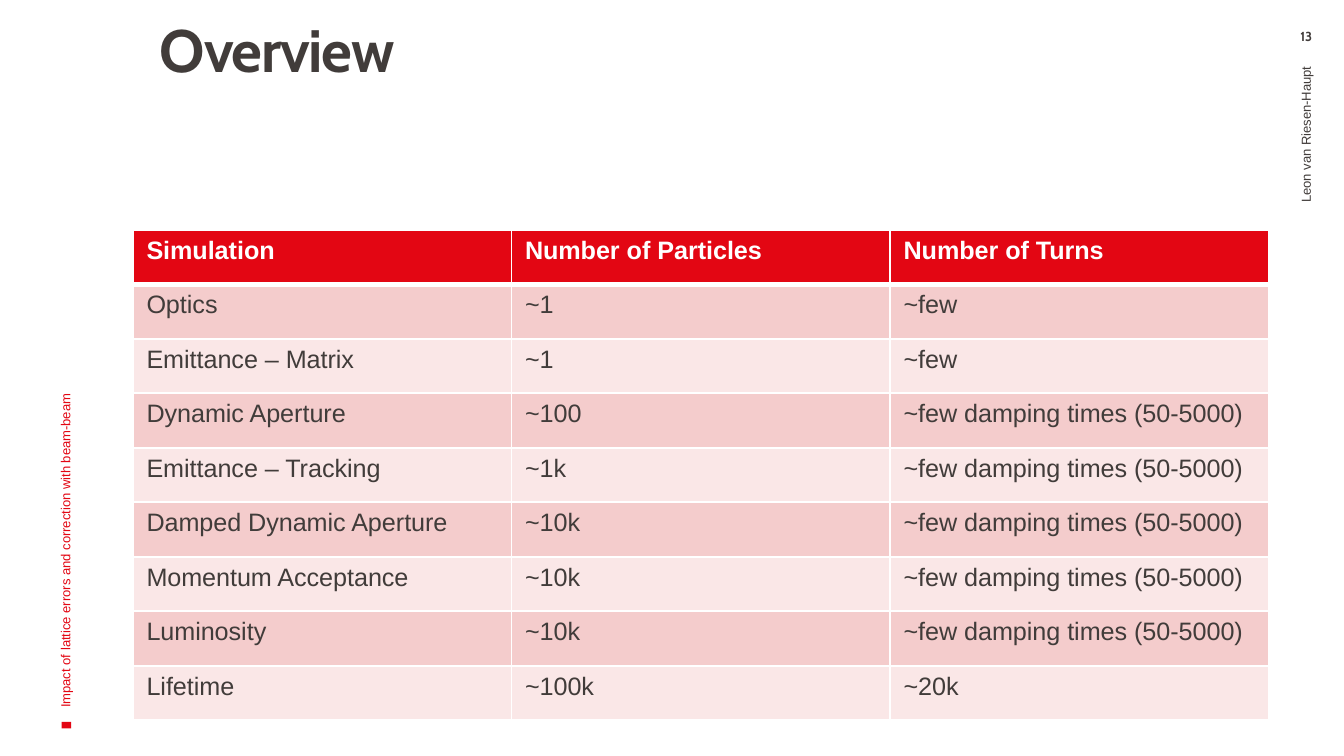
from lxml.etree import SubElement
from pptx import Presentation
from pptx.dml.color import RGBColor
from pptx.enum.shapes import MSO_SHAPE
from pptx.enum.text import MSO_ANCHOR, MSO_AUTO_SIZE, PP_ALIGN
from pptx.oxml.ns import qn
from pptx.util import Inches, Pt

RED, DARK, WHITE = "E30613", "413C3A", "FFFFFF"
BANDS = ["F4CCCC", "FAE7E7"]
DAMPING = "~few damping times (50-5000)"
ROWS = [
    ("Simulation", "Number of Particles", "Number of Turns"),
    ("Optics", "~1", "~few"),
    ("Emittance – Matrix", "~1", "~few"),
    ("Dynamic Aperture", "~100", DAMPING),
    ("Emittance – Tracking", "~1k", DAMPING),
    ("Damped Dynamic Aperture", "~10k", DAMPING),
    ("Momentum Acceptance", "~10k", DAMPING),
    ("Luminosity", "~10k", DAMPING),
    ("Lifetime", "~100k", "~20k"),
]


def paint(target, color):
    target.solid()
    target.fore_color.rgb = RGBColor.from_string(color)


def write(frame, text, size, color=DARK, font="Arial", bold=False,
          align=PP_ALIGN.LEFT, spacing=None, tracking=None):
    para = frame.paragraphs[0]
    para.alignment = align
    para.line_spacing = spacing
    span = para.add_run()
    span.text = text
    span.font.size = Pt(size)
    span.font.name = font
    span.font.bold = bold
    paint(span.font.fill, color)
    if tracking is not None:
        span.font._element.set("spc", str(int(tracking * 100)))


def set_frame(frame, insets, anchor):
    frame.word_wrap = True
    frame.auto_size = MSO_AUTO_SIZE.NONE
    frame.vertical_anchor = anchor
    (frame.margin_left, frame.margin_top,
     frame.margin_right, frame.margin_bottom) = map(Inches, insets)


def add_title(page, box):
    title = page.shapes.title
    title.left, title.top, title.width, title.height = map(Inches, box)
    set_frame(title.text_frame, (0.2, 0, 0.08, 0.05), MSO_ANCHOR.TOP)
    write(title.text_frame, "Overview", 32, font="Cabin", bold=True,
          spacing=0.8, tracking=-0.7)


def add_label(page, box, text, rotation=0, insets=(0.1, 0.05, 0.1, 0.05),
              anchor=MSO_ANCHOR.MIDDLE, **style):
    label = page.shapes.add_textbox(*map(Inches, box))
    label.rotation = rotation
    set_frame(label.text_frame, insets, anchor)
    write(label.text_frame, text, 7, **style)


def add_marker(page, box):
    marker = page.shapes.add_shape(MSO_SHAPE.RECTANGLE, *map(Inches, box))
    marker.rotation = 270
    marker.shadow.inherit = False
    paint(marker.fill, RED)
    marker.line.fill.background()


def set_borders(cell, top, bottom):
    properties = cell._tc.get_or_add_tcPr()
    for side, width in (("L", 1), ("R", 1), ("T", top), ("B", bottom)):
        line = SubElement(properties, qn(f"a:ln{side}"), w=str(Pt(width)))
        fill = SubElement(line, qn("a:solidFill"))
        SubElement(fill, qn("a:srgbClr"), val=WHITE)


def add_simulation_table(page, box):
    left, top, width, height = map(Inches, box)
    columns = len(ROWS[0])
    table = page.shapes.add_table(len(ROWS), columns, left, top, width, height).table
    for column in table.columns:
        column.width = width // columns
    for index, texts in enumerate(ROWS):
        table.rows[index].height = height // len(ROWS)
        header = index == 0
        for number, text in enumerate(texts):
            cell = table.cell(index, number)
            set_borders(cell, 3 if index == 1 else 1, 3 if header else 1)
            paint(cell.fill, RED if header else BANDS[(index - 1) % 2])
            write(cell.text_frame, text, 13.5, WHITE if header else DARK, bold=header)


def build_overview(deck):
    page = deck.slides.add_slide(deck.slide_layouts[5])
    add_marker(page, (0.47, 5.36, 0.05, 0.07))
    add_simulation_table(page, (0.99, 1.71, 8.45, 3.65))
    add_title(page, (0.99, 0.2, 4.01, 1.17))
    add_label(page, (-1.34, 3.04, 3.65, 1),
              "Impact of lattice errors and correction with beam-beam",
              rotation=270, color=RED)
    add_label(page, (7.78, 2.05, 3.87, 0.56), "Leon van Riesen-Haupt",
              rotation=270, align=PP_ALIGN.RIGHT)
    add_label(page, (9.44, 0.21, 0.56, 0.18), "13", insets=(0.1, 0, 0.1, 0),
              anchor=MSO_ANCHOR.TOP, font="Cabin", bold=True, align=PP_ALIGN.CENTER)


def main():
    deck = Presentation()
    deck.slide_width = Inches(10)
    deck.slide_height = deck.slide_width * 9 // 16
    build_overview(deck)
    deck.save("out.pptx")


if __name__ == "__main__":
    main()
